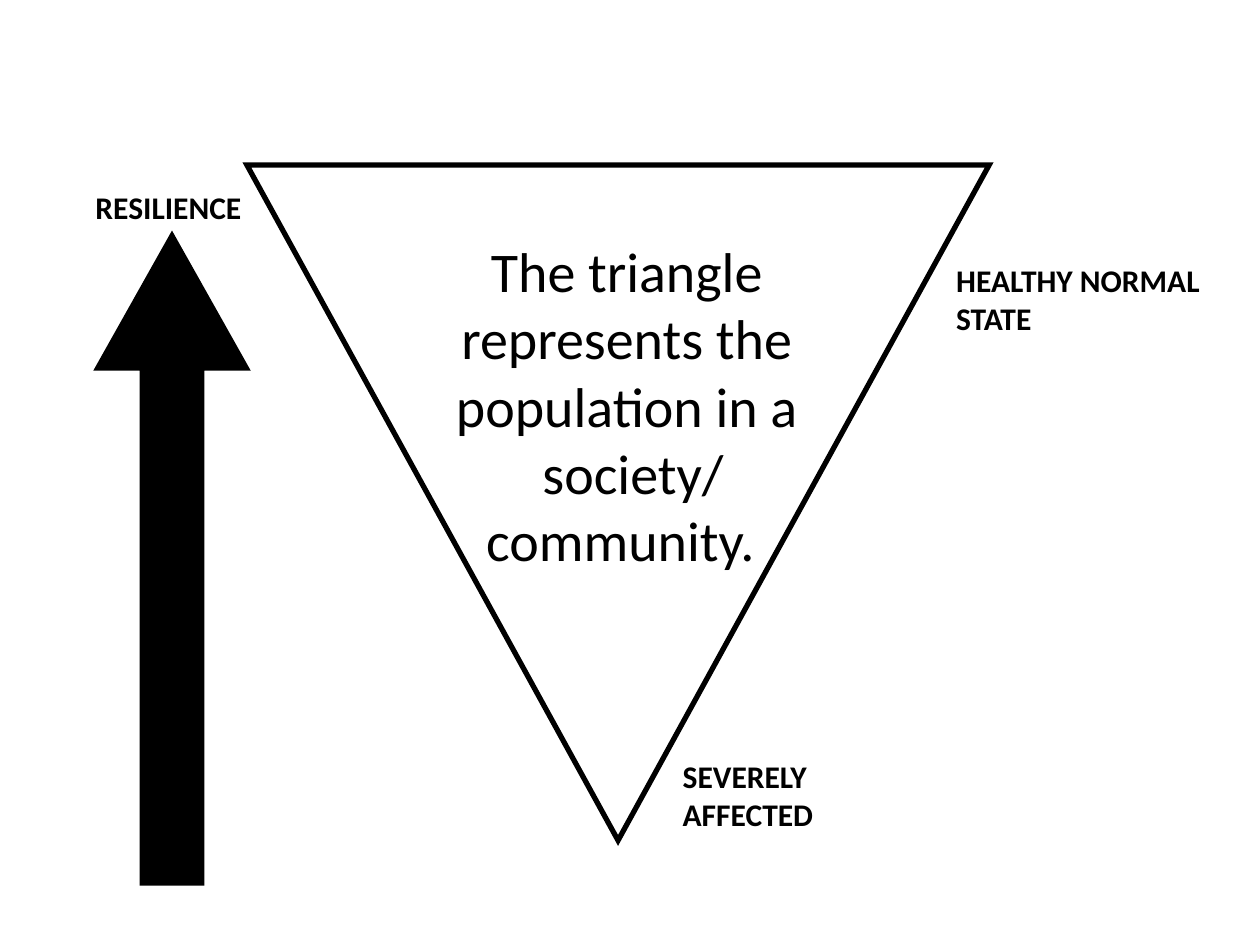
from lxml import etree
from pptx import Presentation
from pptx.dml.color import RGBColor
from pptx.enum.shapes import MSO_SHAPE as Shape
from pptx.enum.text import PP_ALIGN as Align
from pptx.oxml.ns import qn
from pptx.util import Inches, Pt

BLACK = "000000"


def color(hex_code):
    return RGBColor.from_string(hex_code)


def add_text(slide, box, paragraphs, size, bold=False, align=Align.LEFT):
    tf = slide.shapes.add_textbox(*map(Inches, box)).text_frame
    tf.word_wrap = True
    for i, text in enumerate(paragraphs):
        p = tf.add_paragraph() if i else tf.paragraphs[0]
        p.text = text
        p.alignment = align
        p.font.name = "Calibri"
        p.font.size = Pt(size)
        p.font.bold = bold
        p.font.color.rgb = color(BLACK)


def add_label(slide, left, top, width, height, text):
    add_text(slide, (left, top, width, height), [text], 18, bold=True)


def add_population_triangle(slide, left, top, width, height):
    # Inverted outline with sharp corners
    sp = slide.shapes.add_shape(
        Shape.ISOSCELES_TRIANGLE, *map(Inches, (left, top, width, height)))
    sp.rotation = 180
    sp.shadow.inherit = False
    sp.fill.background()
    sp.line.color.rgb = color(BLACK)
    sp.line.width = Pt(3)
    ln = sp.line._get_or_add_ln()
    etree.SubElement(ln, qn("a:miter")).set("lim", "800000")

    # Explanation inside the triangle
    add_text(slide, (left + 1.03, top + 0.52, 3.97, 2.79),
             ["The triangle represents the population in a",
              " society/\vcommunity. "], 32, align=Align.CENTER)

    # States at the wide top and the narrow tip
    add_label(slide, left + 5.53, top + 0.71, 2.25, 0.71,
              "HEALTHY NORMAL STATE")
    add_label(slide, left + 3.36, top + 4.65, 2.17, 0.71, "SEVERELY AFFECTED")


def add_resilience_arrow(slide, left, top, width, height):
    sp = slide.shapes.add_shape(
        Shape.UP_ARROW, *map(Inches, (left, top, width, height)))
    sp.adjustments[0] = 0.41
    sp.adjustments[1] = 0.89
    sp.shadow.inherit = False
    sp.fill.solid()
    sp.fill.fore_color.rgb = color(BLACK)
    sp.line.fill.background()

    # Label above the arrowhead
    add_label(slide, left - 0.08, top - 0.39, 1.8, 0.4, "RESILIENCE")


def main():
    prs = Presentation()
    prs.slide_width, prs.slide_height = Inches(10), Inches(7.5)
    slide = prs.slides.add_slide(prs.slide_layouts[6])
    add_population_triangle(slide, 1.96, 1.31, 5.89, 5.36)
    add_resilience_arrow(slide, 0.74, 1.83, 1.25, 5.2)
    prs.save("out.pptx")


if __name__ == "__main__":
    main()
